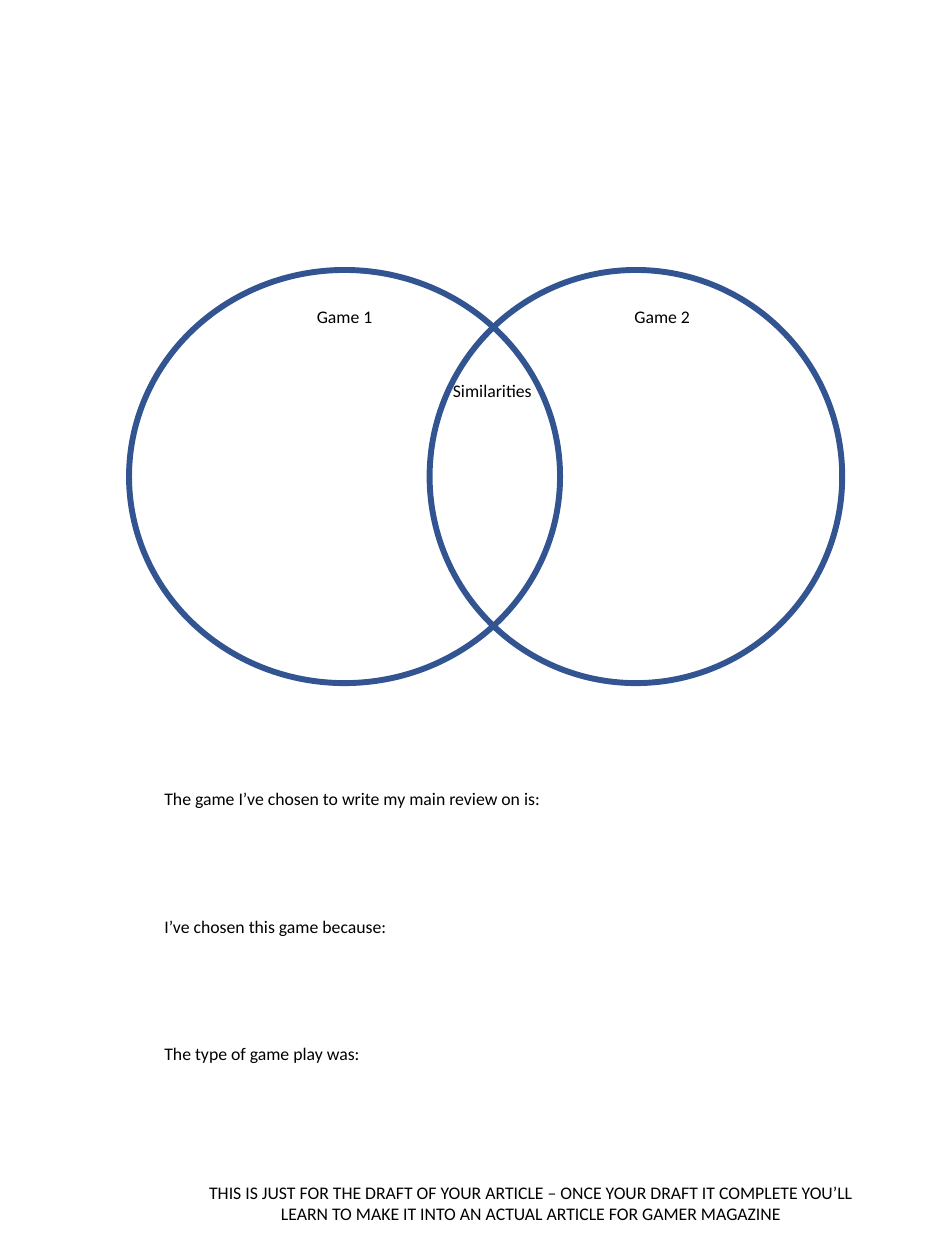
from pptx import Presentation
from pptx.dml.color import RGBColor
from pptx.enum.shapes import MSO_SHAPE
from pptx.enum.text import MSO_AUTO_SIZE, PP_ALIGN
from pptx.util import Inches, Pt

THEME = {
    "font": "Calibri",
    "size": Pt(18),
    "text": RGBColor.from_string("000000"),
    "ring": RGBColor.from_string("325491"),
    "ring_width": Pt(6),
    "answer_space": Pt(108),
}

deck = Presentation()
deck.slide_width = Inches(13.33)
deck.slide_height = Inches(17.78)
slide = deck.slides.add_slide(deck.slide_layouts[6])


def add_text(left, top, width, height, lines, wrap=False, align=PP_ALIGN.LEFT):
    box = slide.shapes.add_textbox(Inches(left), Inches(top), Inches(width), Inches(height))
    frame = box.text_frame
    frame.text = "\n".join(lines)
    frame.word_wrap = wrap
    frame.auto_size = MSO_AUTO_SIZE.SHAPE_TO_FIT_TEXT
    for index, paragraph in enumerate(frame.paragraphs):
        paragraph.alignment = align
        if index:
            paragraph.space_before = THEME["answer_space"]
        for run in paragraph.runs:
            run.font.name = THEME["font"]
            run.font.size = THEME["size"]
            run.font.color.rgb = THEME["text"]


for left, width in [(1.82, 6.08), (6.06, 5.82)]:
    game_circle = slide.shapes.add_shape(
        MSO_SHAPE.OVAL, Inches(left), Inches(3.81), Inches(width), Inches(5.83)
    )
    game_circle.shadow.inherit = False
    game_circle.fill.background()
    game_circle.line.color.rgb = THEME["ring"]
    game_circle.line.width = THEME["ring_width"]

for label, left, top, width in [
    ("Game 1", 4.37, 4.27, 1),
    ("Game 2", 8.85, 4.27, 1.09),
    ("Similarities", 6.29, 5.31, 1.33),
]:
    add_text(left, top, width, 0.4, [label])

review_prompts = [
    "The game I’ve chosen to write my main review on is:",
    "I’ve chosen this game because:",
    "The type of game play was:",
]
add_text(2.22, 11.07, 5.57, 5.55, review_prompts)

draft_notice = (
    "THIS IS JUST FOR THE DRAFT OF YOUR ARTICLE – ONCE YOUR DRAFT IT COMPLETE YOU’LL "
    "LEARN TO MAKE IT INTO AN ACTUAL ARTICLE FOR GAMER MAGAZINE"
)
add_text(2.66, 16.62, 9.66, 0.71, [draft_notice], wrap=True, align=PP_ALIGN.CENTER)

deck.save("out.pptx")
